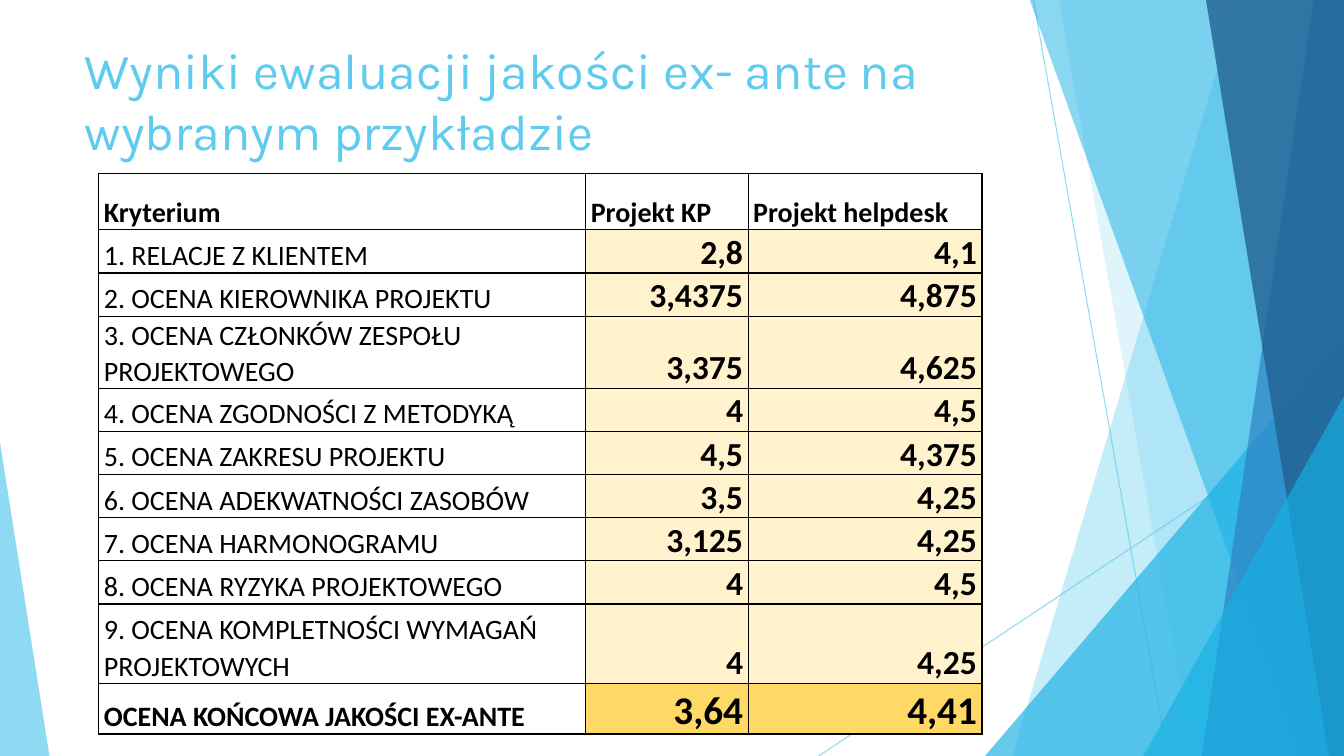
from lxml.etree import SubElement as Sub
from pptx import Presentation
from pptx.dml.color import RGBColor as RGB
from pptx.enum.shapes import MSO_CONNECTOR as CON, MSO_SHAPE as SHP
from pptx.enum.text import MSO_ANCHOR as ANC, PP_ALIGN as ALN
from pptx.oxml.ns import qn
from pptx.util import Inches, Pt

WIDE, HIGH = 13.33, 7.5
SKY, AQUA, BLUE, NAVY = "5FCBEF", "17B0E4", "2E83C3", "226292"
BLACK, CREAM, GOLD = "000000", "FFF2CC", "FFD966"


def paint(color):
    return RGB.from_string(color)


def fade(fill, alpha):
    """Make a solid fill see-through; alpha is in percent."""
    for tone in fill.iter(qn("a:srgbClr")):
        Sub(tone, qn("a:alpha"), val=str(alpha * 1000))


class Deck:
    head, body = "Karla", "Calibri"

    def __init__(self):
        self.show = Presentation()
        self.show.slide_width = Inches(WIDE)
        self.show.slide_height = Inches(HIGH)
        self.page = self.show.slides.add_slide(self.show.slide_layouts[6])
        self.items = self.page.shapes

    def line(self, x1, y1, x2, y2, color, alpha):
        ends = [Inches(v) for v in (x1, y1, x2, y2)]
        rule = self.items.add_connector(CON.STRAIGHT, *ends)
        rule.line.color.rgb = paint(color)
        rule.line.width = Pt(0.75)
        props = rule._element.spPr
        fade(props, alpha)
        Sub(props, qn("a:effectLst"))

    def tint(self, shape, color, alpha):
        shape.shadow.inherit = False
        shape.fill.solid()
        shape.fill.fore_color.rgb = paint(color)
        shape.line.fill.background()
        fade(shape._element.spPr, alpha)

    def slab(self, top, foot, color, alpha):
        """Full-height band from a slanted left edge to the right margin."""
        pts = [(top, -0.01), (WIDE, -0.01), (WIDE, HIGH), (foot, HIGH)]
        pts = [(Inches(x), Inches(y)) for x, y in pts]
        form = self.items.build_freeform(*pts[0], scale=1.0)
        form.add_line_segments(pts[1:], close=True)
        self.tint(form.convert_to_shape(), color, alpha)

    def wedge(self, x, y, wide, peak, color, alpha):
        """Triangle standing on the lower edge of the slide."""
        box = [Inches(v) for v in (x, y, wide, HIGH - y)]
        shape = self.items.add_shape(SHP.ISOSCELES_TRIANGLE, *box)
        shape.adjustments[0] = peak
        self.tint(shape, color, alpha)

    def text(self, para, words, font, size, color, bold=False):
        run = para.add_run()
        run.text = words
        run.font.name = font
        run.font.size = Pt(size)
        run.font.bold = bold
        run.font.color.rgb = paint(color)

    def title(self, x, y, wide, high, words):
        box = [Inches(v) for v in (x, y, wide, high)]
        frame = self.items.add_textbox(*box).text_frame
        frame.word_wrap = True
        frame.vertical_anchor = ANC.MIDDLE
        self.text(frame.paragraphs[0], words, self.head, 36, SKY)

    def edge(self, cell):
        props = cell._tc.get_or_add_tcPr()
        for side in ("lnL", "lnR", "lnT", "lnB"):
            rim = Sub(props, qn("a:" + side), w=str(Pt(1)))
            Sub(Sub(rim, qn("a:solidFill")), qn("a:srgbClr"), val=BLACK)

    def cell(self, cell, words, size, bold, align, fill):
        cell.margin_left = cell.margin_right = Inches(0.05)
        cell.margin_top = cell.margin_bottom = 0
        cell.vertical_anchor = ANC.BOTTOM
        para = cell.text_frame.paragraphs[0]
        para.line_spacing = 1.07
        para.alignment = align
        self.text(para, words, self.body, size, BLACK, bold)
        self.edge(cell)
        if fill:
            cell.fill.solid()
            cell.fill.fore_color.rgb = paint(fill)
        else:
            cell.fill.background()

    def table(self, x, y, cols, highs, rows):
        box = [Inches(v) for v in (x, y, sum(cols), sum(highs))]
        grid = self.items.add_table(len(rows), len(cols), *box).table
        grid.first_row = grid.horz_banding = False
        for col, wide in zip(grid.columns, cols):
            col.width = Inches(wide)
        for row, high in zip(grid.rows, highs):
            row.height = Inches(high)
        last = len(rows) - 1
        for r, row in enumerate(rows):
            for c, words in enumerate(row):
                if r == 0 or c == 0:
                    look = 20, r in (0, last), ALN.LEFT, None
                elif r == last:
                    look = 28, True, ALN.RIGHT, GOLD
                else:
                    look = 24, True, ALN.RIGHT, CREAM
                self.cell(grid.cell(r, c), words, *look)


ROWS = [
    ("Kryterium", "Projekt KP", "Projekt helpdesk"),
    ("1. RELACJE Z KLIENTEM", "2,8", "4,1"),
    ("2. OCENA KIEROWNIKA PROJEKTU", "3,4375", "4,875"),
    ("3. OCENA CZŁONKÓW ZESPOŁU PROJEKTOWEGO", "3,375", "4,625"),
    ("4. OCENA ZGODNOŚCI Z METODYKĄ", "4", "4,5"),
    ("5. OCENA ZAKRESU PROJEKTU", "4,5", "4,375"),
    ("6. OCENA ADEKWATNOŚCI ZASOBÓW", "3,5", "4,25"),
    ("7. OCENA HARMONOGRAMU", "3,125", "4,25"),
    ("8. OCENA RYZYKA PROJEKTOWEGO", "4", "4,5"),
    ("9. OCENA KOMPLETNOŚCI WYMAGAŃ PROJEKTOWYCH", "4", "4,25"),
    ("OCENA KOŃCOWA JAKOŚCI EX-ANTE", "3,64", "4,41"),
]


def main():
    deck = Deck()

    # Backdrop of overlapping facets
    deck.line(10.25, 0, 11.58, HIGH, SKY, 70)
    deck.line(WIDE, 4.03, 8.12, HIGH, SKY, 70)
    deck.slab(12.28, 10.04, SKY, 36)
    deck.slab(10.5, 11.83, SKY, 20)
    deck.wedge(9.77, 3.33, 3.56, 1, AQUA, 66)
    deck.slab(10.21, 12.91, AQUA, 50)
    deck.slab(13.03, 11.92, BLUE, 70)
    deck.slab(11.96, 13.18, NAVY, 80)
    deck.wedge(11.34, 3.93, 1.99, 1, AQUA, 66)
    deck.wedge(0, 4.39, 0.49, 0, SKY, 70)

    # Title
    deck.title(0.74, 0.27, 9.4, 1.44,
               "Wyniki ewaluacji jakości ex- ante na wybranym przykładzie")

    # Table of scores
    highs = [0.56, 0.39] + [0.4] * 7 + [0.79, 0.5]
    deck.table(0.98, 1.72, [4.83, 1.61, 2.32], highs, ROWS)

    deck.show.save("out.pptx")


if __name__ == "__main__":
    main()
